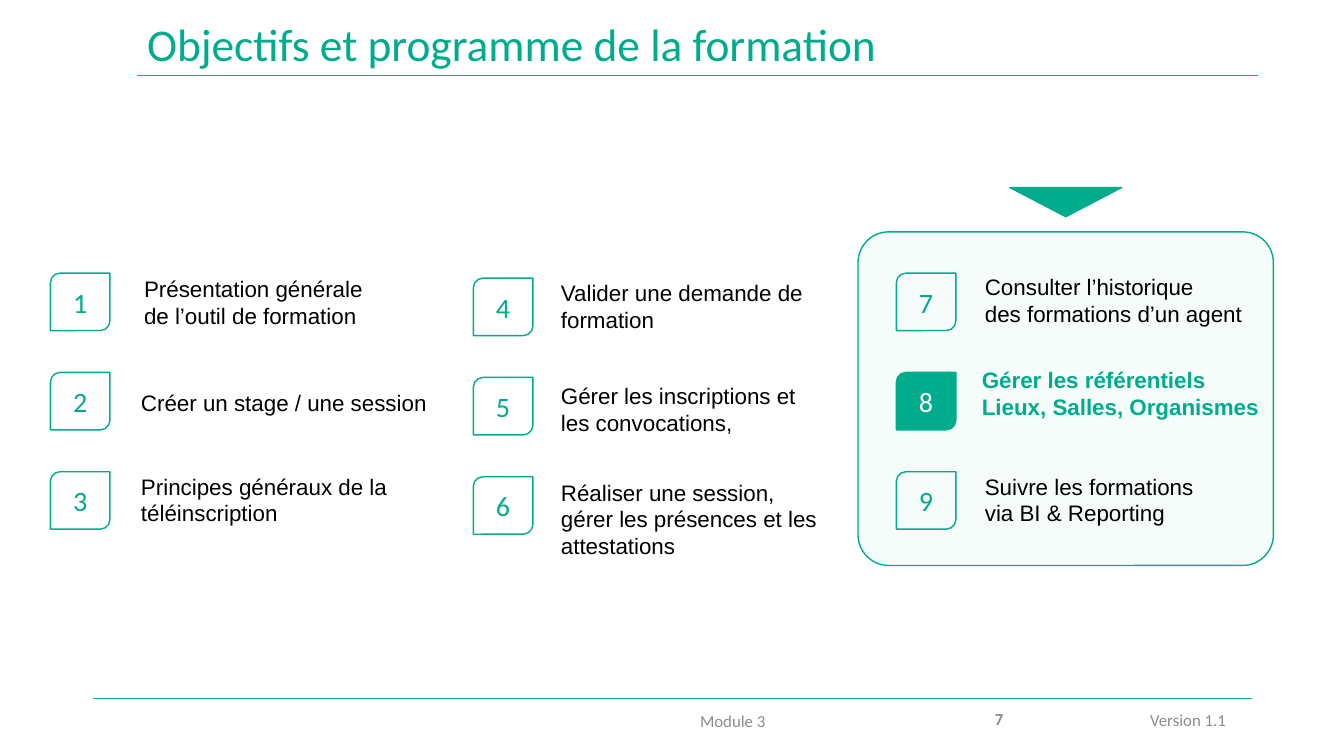
from collections import namedtuple

from lxml import etree
from pptx import Presentation
from pptx.dml.color import RGBColor
from pptx.enum.shapes import MSO_CONNECTOR, MSO_SHAPE
from pptx.enum.text import MSO_ANCHOR, PP_ALIGN
from pptx.oxml.ns import qn
from pptx.util import Inches, Pt

LEFT, CENTER, RIGHT = PP_ALIGN.LEFT, PP_ALIGN.CENTER, PP_ALIGN.RIGHT
TOP, MIDDLE = MSO_ANCHOR.TOP, MSO_ANCHOR.MIDDLE
BADGE, PANEL, POINTER = (MSO_SHAPE.ROUND_2_DIAG_RECTANGLE,
                         MSO_SHAPE.ROUNDED_RECTANGLE, MSO_SHAPE.ISOSCELES_TRIANGLE)
STRAIGHT = MSO_CONNECTOR.STRAIGHT

COLORS = {"green": "00AC8C", "pale": "F6FCFA", "grey": "8C8C8C",
          "black": "000000", "white": "FFFFFF"}

Box = namedtuple("Box", "left top width height")
# dx and dy place the label relative to the corner of its numbered badge
Topic = namedtuple("Topic", "text dx dy width lines")

BADGE_WIDTH, BADGE_HEIGHT = 0.59, 0.57
COLUMN_STEP, ROW_STEP = 4.195, 0.985
LINE_HEIGHT, LABEL_PADDING = 0.27, 0.1
CURRENT_TOPIC = 8

COLUMN_TOPS = [2.71, 2.76, 2.71]
COLUMNS = [
    [Topic("Présentation générale\nde l’outil de formation", 0.83, -0.03, 3.09, 2),
     Topic("Créer un stage / une session", 0.8, 0.12, 3.12, 1),
     Topic("Principes généraux de la téléinscription", 0.8, -0.04, 3.12, 2)],
    [Topic("Valider une demande de formation", 0.77, -0.04, 2.85, 2),
     Topic("Gérer les inscriptions et les convocations,", 0.77, 0, 2.85, 2),
     Topic("Réaliser une session, gérer les présences et les attestations",
           0.77, -0.03, 2.85, 3)],
    [Topic("Consulter l’historique\ndes formations d’un agent", 0.78, -0.05, 3.16, 2),
     Topic("Gérer les référentiels Lieux, Salles, Organismes", 0.75, -0.11, 2.96, 2),
     Topic("Suivre les formations\nvia BI & Reporting", 0.78, -0.04, 2.6, 2)],
]


def color(name):
    return RGBColor.from_string(COLORS[name])


def write(shape, text, size, font_name, color_name, bold=False, align=LEFT, anchor=MIDDLE):
    frame = shape.text_frame
    frame.word_wrap = True
    frame.vertical_anchor = anchor
    paragraph = frame.paragraphs[0]
    paragraph.text = text
    paragraph.alignment = align
    font = paragraph.font
    font.size, font.name, font.bold = Pt(size), font_name, bold
    font.color.rgb = color(color_name)
    return paragraph


def add_text(slide, box, *args, **options):
    return write(slide.shapes.add_textbox(*map(Inches, box)), *args, **options)


def add_outlined_shape(slide, kind, box, fill=None):
    shape = slide.shapes.add_shape(kind, *map(Inches, box))
    shape.shadow.inherit = False
    if fill:
        shape.fill.solid()
        shape.fill.fore_color.rgb = color(fill)
    else:
        shape.fill.background()
    shape.line.color.rgb = color("green")
    shape.line.width = Pt(1)
    return shape


def add_rule(slide, left, right, top):
    rule = slide.shapes.add_connector(STRAIGHT, *map(Inches, (left, top, right, top)))
    rule.line.color.rgb = color("green")
    rule.line.width = Pt(0.5)
    etree.SubElement(rule._element.spPr, qn("a:effectLst"))


def add_header(slide, box):
    bottom = box.top + box.height
    add_rule(slide, box.left, box.left + box.width, bottom)
    title = add_text(slide, box, "Objectifs et programme de la formation",
                     32.4, "Calibri", "green")
    title.line_spacing = 0.9


def add_footer(slide, box):
    add_rule(slide, box.left, box.left + box.width, box.top)
    for text, dx, dy, width, bold, align in [
            ("Module 3", 3.5, 0.02, 3.27, False, RIGHT),
            ("7", 8.08, 0, 1.05, True, RIGHT),
            ("Version 1.1", 10.39, 0.01, 1.13, False, LEFT)]:
        add_text(slide, Box(box.left + dx, box.top + dy, width, box.height),
                 text, 12, "Calibri", "grey", bold=bold, align=align)


def add_highlight(slide, box):
    """Panel behind the current column, with a pointer centred above it."""
    panel = add_outlined_shape(slide, PANEL, box, "pale")
    panel.adjustments[0] = 0.092
    width, height, gap = 1.11, 0.29, 0.15
    pointer = add_outlined_shape(
        slide, POINTER,
        Box(box.left + (box.width - width) / 2, box.top - gap - height, width, height),
        "green")
    pointer.rotation = 180


def add_topic(slide, number, topic, left, top):
    current = number == CURRENT_TOPIC
    badge = add_outlined_shape(slide, BADGE, Box(left, top, BADGE_WIDTH, BADGE_HEIGHT),
                               "green" if current else None)
    write(badge, str(number), 20, "Calibri", "white" if current else "green", align=CENTER)
    label_box = Box(left + topic.dx, top + topic.dy, topic.width,
                    topic.lines * LINE_HEIGHT + LABEL_PADDING)
    add_text(slide, label_box, topic.text, 16, "Arial",
             "green" if current else "black", bold=current, anchor=TOP)


def add_programme(slide, left):
    number = 1
    for column, (top, topics) in enumerate(zip(COLUMN_TOPS, COLUMNS)):
        for row, topic in enumerate(topics):
            add_topic(slide, number, topic,
                      left + column * COLUMN_STEP, top + row * ROW_STEP)
            number += 1


def main():
    presentation = Presentation()
    presentation.slide_width, presentation.slide_height = Inches(13.33), Inches(7.5)
    slide = presentation.slides.add_slide(presentation.slide_layouts[6])
    add_header(slide, Box(1.36, 0.18, 11.12, 0.57))
    add_highlight(slide, Box(8.51, 2.3, 4.12, 3.31))
    add_programme(slide, 0.5)
    add_footer(slide, Box(0.92, 6.93, 11.5, 0.41))
    presentation.save("out.pptx")


if __name__ == "__main__":
    main()
